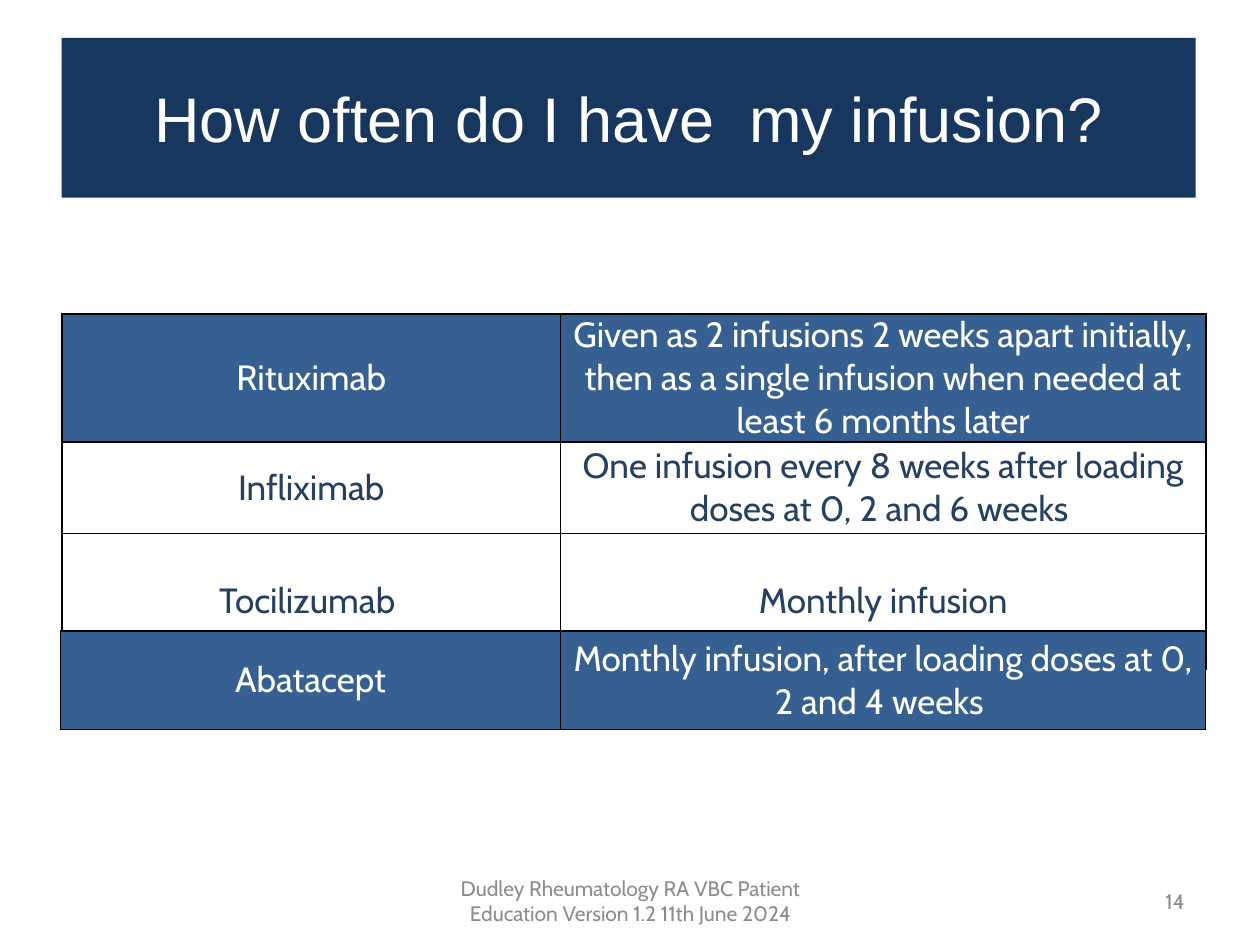
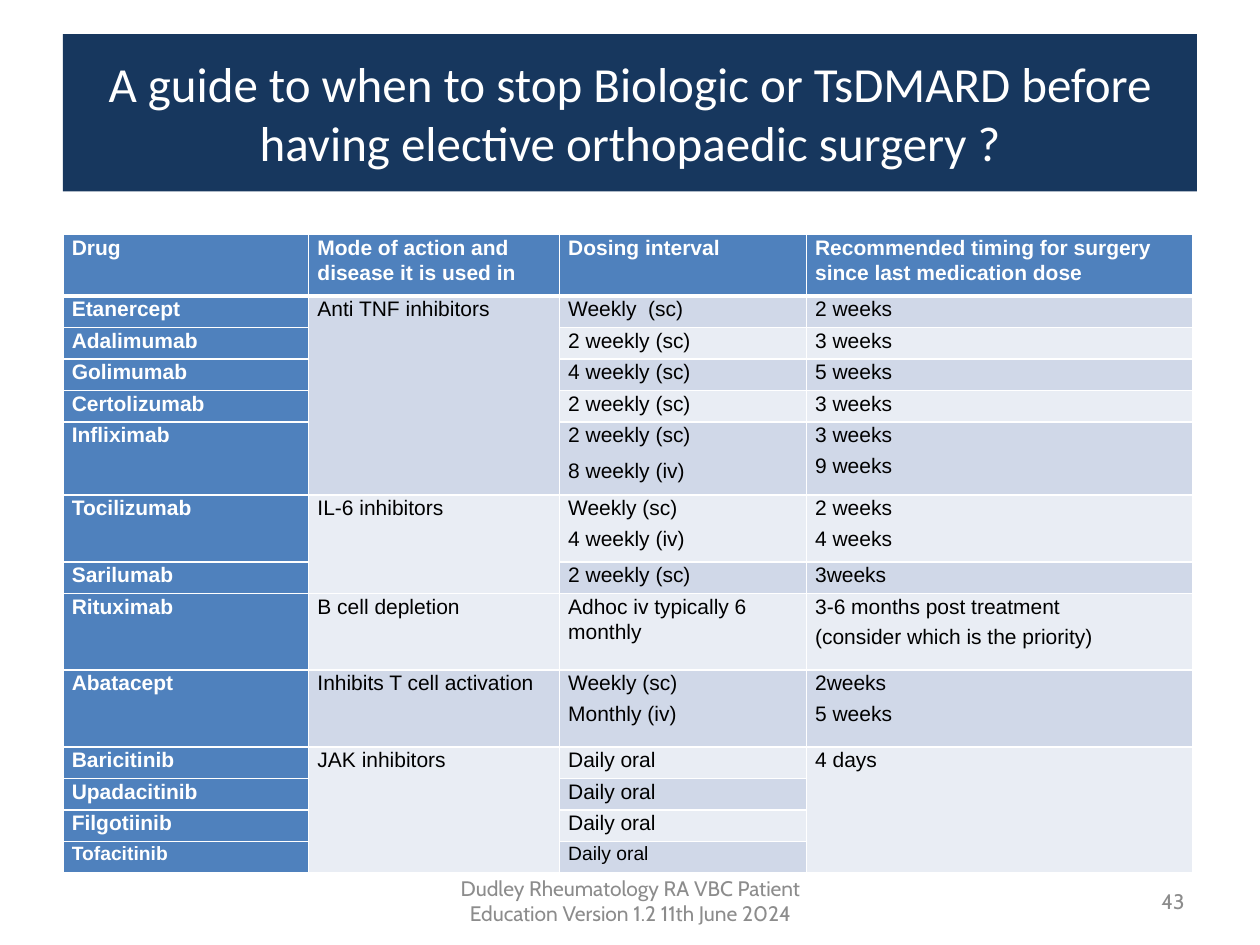
from pptx import Presentation
from pptx.dml.color import RGBColor
from pptx.enum.shapes import MSO_SHAPE as SHAPE
from pptx.enum.text import MSO_ANCHOR as ANCHOR, PP_ALIGN as ALIGN
from pptx.oxml import parse_xml
from pptx.oxml.ns import nsdecls
from pptx.util import Inches, Pt

INFUSION = {
    "title": "How often do I have  my infusion?",
    "number": "14",
    "schedule": [
        ("Rituximab", "Given as 2 infusions 2 weeks apart initially, "
                      "then as a single infusion when needed at least 6 months later"),
        ("Infliximab", "One infusion every 8 weeks after loading doses at 0, 2 and 6 weeks "),
        ("Tocilizumab ", "Monthly infusion"),
    ],
    "last": [("Abatacept", "Monthly infusion, after loading doses at 0, 2 and 4 weeks ")],
}
SURGERY = {
    "title": "A guide to when to stop Biologic or TsDMARD before "
             "having elective orthopaedic surgery ?",
    "number": "43",
    "drugs": [
        ("Drug", "Mode of action and disease it is used in", "Dosing interval",
         "Recommended timing for surgery since last medication dose"),
        ("Etanercept", "Anti TNF inhibitors", "Weekly  (sc)", "2 weeks"),
        ("Adalimumab", None, "2 weekly (sc)", "3 weeks"),
        ("Golimumab", None, "4 weekly (sc)", "5 weeks"),
        ("Certolizumab", None, "2 weekly (sc)", "3 weeks"),
        ("Infliximab", None, "2 weekly (sc)\n8 weekly (iv)", "3 weeks\n9 weeks"),
        ("Tocilizumab", "IL-6 inhibitors", "Weekly (sc)\n4 weekly (iv)", "2 weeks \n4 weeks"),
        ("Sarilumab", None, "2 weekly (sc)", "3weeks"),
        ("Rituximab", "B cell depletion", "Adhoc iv typically 6 monthly",
         "3-6 months post treatment\n(consider which is the priority)"),
        ("Abatacept", "Inhibits T cell activation", "Weekly (sc)\nMonthly (iv)",
         "2weeks \n5 weeks"),
        ("Baricitinib", "JAK inhibitors", "Daily oral", "4 days"),
        ("Upadacitinib", None, "Daily oral", None),
        ("Filgotiinib", None, "Daily oral", None),
        ("Tofacitinib", None, "Daily oral", None),
    ],
}
FOOTER = "Dudley Rheumatology RA VBC Patient Education Version 1.2 11th June 2024"
EXTRA_GAP_BEFORE = "8 weekly (iv)"

LINE_H = 0.25
DRUG_HEIGHTS = [0.49] + [LINE_H] * 4 + [0.58, 0.53, LINE_H, 0.61, 0.61] + [LINE_H] * 4

WHITE = RGBColor(0xFF, 0xFF, 0xFF)
BLACK = RGBColor(0, 0, 0)
NAVY = RGBColor(0x17, 0x37, 0x5E)
INK = RGBColor(0x25, 0x40, 0x61)
STEEL = RGBColor(0x37, 0x60, 0x92)
BLUE = RGBColor(0x4F, 0x81, 0xBD)
BANDS = RGBColor(0xE9, 0xED, 0xF4), RGBColor(0xD0, 0xD8, 0xE8)
GREY = RGBColor(0x8C, 0x8C, 0x8C)


def write(tf, text, size, font, color, align=ALIGN.LEFT, bold=False, **spacing):
    for i, line in enumerate(text.split("\n")):
        p = tf.add_paragraph() if i else tf.paragraphs[0]
        p.alignment = align
        for name, value in spacing.items():
            setattr(p, name, value)
        if line == EXTRA_GAP_BEFORE:
            p.space_before = Pt(3)
        r = p.add_run()
        r.text = line
        for name, value in {"size": Pt(size), "name": font, "bold": bold}.items():
            setattr(r.font, name, value)
        r.font.color.rgb = color


def add_band(s, box, title, size, font):
    sp = s.shapes.add_shape(SHAPE.RECTANGLE, *map(Inches, box))
    sp.shadow.inherit = False
    sp.fill.solid()
    sp.fill.fore_color.rgb = NAVY
    sp.line.fill.background()
    tf = sp.text_frame
    tf.word_wrap, tf.vertical_anchor = True, ANCHOR.MIDDLE
    write(tf, title, size, font, WHITE, ALIGN.CENTER)


def add_footer(s, number):
    for left, width, text, align in ((3.42, 3.17, FOOTER, ALIGN.CENTER),
                                     (7.17, 2.33, number, ALIGN.RIGHT)):
        tf = s.shapes.add_textbox(*map(Inches, (left, 6.95, width, 0.4))).text_frame
        tf.word_wrap, tf.vertical_anchor = True, ANCHOR.MIDDLE
        write(tf, text, 12, "Cabin", GREY, align)


def add_grid(s, left, top, widths, heights):
    box = map(Inches, (left, top, sum(widths), sum(heights)))
    table = s.shapes.add_table(len(heights), len(widths), *box).table
    table.first_row = table.horz_banding = False
    for col, width in zip(table.columns, widths):
        col.width = Inches(width)
    for row, height in zip(table.rows, heights):
        row.height = Inches(height)
    return table


def style_cell(cell, fill, color, borders, anchor):
    for name, value in {"margin_left": 0.07, "margin_right": 0.07,
                        "margin_top": 0, "margin_bottom": 0}.items():
        setattr(cell, name, Inches(value))
    cell.vertical_anchor = anchor
    if fill is None:
        cell.fill.background()
    else:
        cell.fill.solid()
        cell.fill.fore_color.rgb = fill
    tc_pr = cell._tc.get_or_add_tcPr()
    for i, side in enumerate("LRTB"):
        tc_pr.insert(i, parse_xml(
            f'<a:ln{side} {nsdecls("a")} w="{Pt(borders[side])}"><a:solidFill>'
            f'<a:srgbClr val="{color}"/></a:solidFill></a:ln{side}>'))


def add_schedule(s, left, top, widths, heights, rows, filled):
    table = add_grid(s, left, top, widths, heights)
    for i, row in enumerate(rows):
        for j, text in enumerate(row):
            cell = table.cell(i, j)
            borders = {"L": 0.5 if j else 1, "R": 1 if j else 0.5,
                       "T": 1 if i < 2 else 0.5, "B": 0.5 if i else 1}
            style_cell(cell, STEEL if i in filled else None, BLACK, borders, ANCHOR.MIDDLE)
            write(cell.text_frame, text, 20, "Cabin",
                  WHITE if i in filled else INK, ALIGN.CENTER)


def add_drugs(s, rows):
    table = add_grid(s, 0.5, 1.86, (1.95, 1.99, 1.96, 3.07), DRUG_HEIGHTS)
    for i, row in enumerate(rows):
        for j, text in enumerate(row):
            cell = table.cell(i, j)
            head = i == 0 or j == 0
            borders = {"L": 1, "R": 1, "T": 3 if i == 1 else 1, "B": 1 if i else 3}
            style_cell(cell, BLUE if head else BANDS[i % 2], WHITE, borders, ANCHOR.TOP)
            if text:
                write(cell.text_frame, text, 11 if i == len(rows) - 1 else 12, "Arial",
                      WHITE if head else BLACK, bold=head,
                      line_spacing=1.07, space_after=Pt(3 if "\n" in text else 8))
    for j in range(len(rows[0])):
        starts = [i for i, row in enumerate(rows) if row[j]] + [len(rows)]
        for start, end in zip(starts, starts[1:]):
            if end - start > 1:
                table.cell(start, j).merge(table.cell(end - 1, j))


def main():
    prs = Presentation()
    prs.slide_width, prs.slide_height = Inches(10), Inches(7.5)
    blank = prs.slide_layouts[6]

    s = prs.slides.add_slide(blank)
    add_schedule(s, 0.49, 2.49, (3.96, 5.12), (1.02, 0.72, 1.08), INFUSION["schedule"], {0})
    add_band(s, (0.49, 0.3, 9, 1.27), INFUSION["title"], 36, "Arial")
    add_schedule(s, 0.48, 5.01, (3.97, 5.12), (0.78,), INFUSION["last"], {0})
    add_footer(s, INFUSION["number"])

    s = prs.slides.add_slide(blank)
    add_band(s, (0.5, 0.27, 9, 1.25), SURGERY["title"], 28, "Calibri")
    add_drugs(s, SURGERY["drugs"])
    add_footer(s, SURGERY["number"])

    prs.save("out.pptx")


if __name__ == "__main__":
    main()
